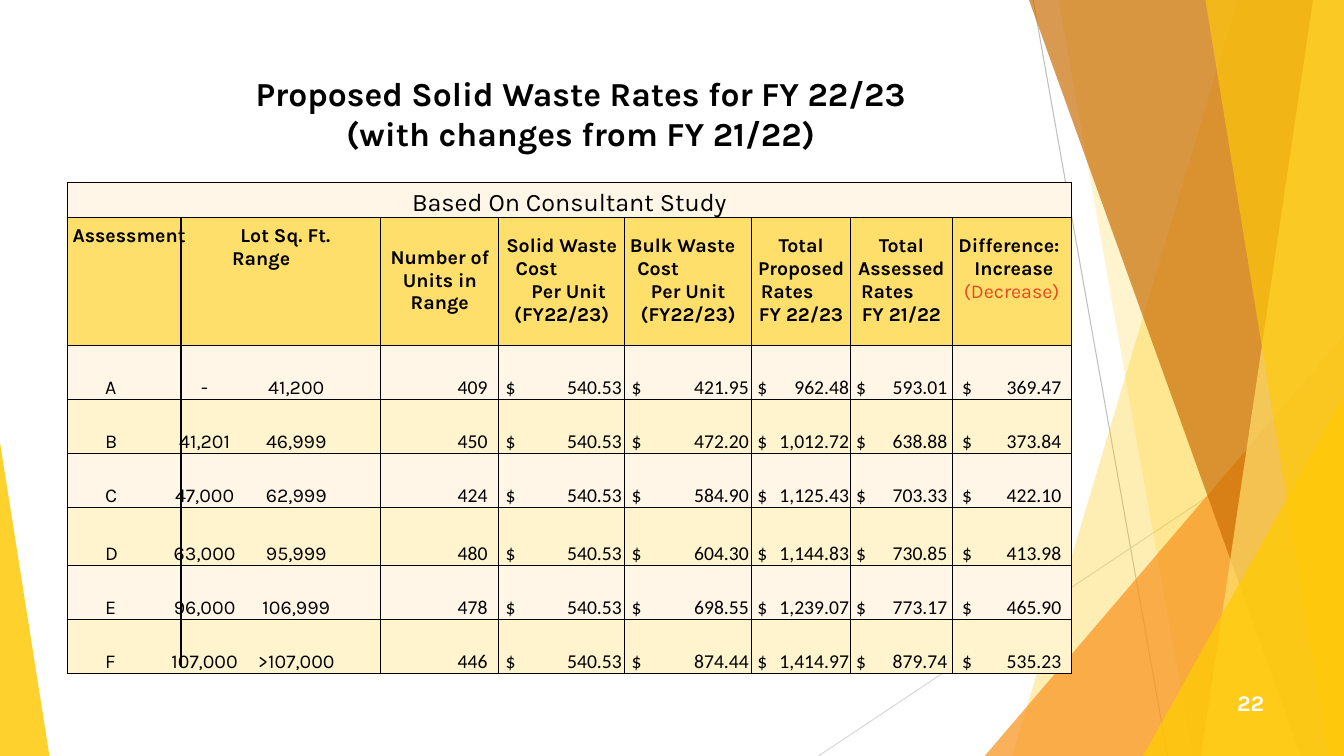
from dataclasses import dataclass

from lxml.etree import SubElement
from pptx import Presentation
from pptx.dml.color import RGBColor
from pptx.enum.shapes import MSO_CONNECTOR as Connector, MSO_SHAPE as Preset
from pptx.enum.text import MSO_ANCHOR as Anchor, PP_ALIGN as Align
from pptx.oxml.ns import qn
from pptx.util import Pt


@dataclass(frozen=True)
class Theme:
    gold: str = "FFCA08"
    pale_gold: str = "FFDF6B"
    orange: str = "F8931D"
    brown: str = "CA6F06"
    cream: str = "FFF6E7"
    lemon: str = "FFF4CE"
    red: str = "E64823"
    black: str = "000000"
    white: str = "FFFFFF"
    grey: str = "BFBFBF"
    light_grey: str = "D9D9D9"
    font: str = "Karla"
    number_font: str = "Calibri"
    title: int = 24
    subtitle: int = 18
    page_number: int = 16
    body: int = 14


@dataclass(frozen=True)
class Band:
    """Four-sided facet that reaches the right edge of the slide."""
    top_x: float
    bottom_x: float
    color: str
    opacity: int


@dataclass(frozen=True)
class Triangle:
    left: float
    top: float
    width: float
    apex: float
    color: str
    opacity: int


@dataclass(frozen=True)
class Line:
    """Header line; the indents move it sideways."""
    text: str
    left: float = 0
    right: float = 0
    tabs: tuple = ()
    color: str = "000000"
    bold: bool = True


@dataclass(frozen=True)
class Column:
    width: float
    head_top: float
    head: tuple
    pad_left: float = 0
    pad_right: float = 0


THEME = Theme()
WIDTH, HEIGHT = 960, 540

FACETS = (
    Band(884, 723, THEME.gold, 30),
    Band(756, 852, THEME.gold, 20),
    Triangle(703.4, 239.8, 256.6, 1, THEME.orange, 72),
    Band(735, 929.5, THEME.brown, 70),
    Band(938, 858, THEME.pale_gold, 70),
    Band(861, 949, THEME.gold, 65),
    Triangle(816.5, 283, 143.5, 1, THEME.gold, 80),
    Triangle(0, 316, 35.3, 0, THEME.gold, 85),
)

COLUMNS = (
    Column(223.9, 5, (Line("Assessment\tLot Sq. Ft.", tabs=((120, "l"),)),
                      Line("Range", left=114))),
    Column(84.2, 20.3, (Line("Number of"), Line("Units in"), Line("Range")), 0, 8),
    Column(90, 12, (Line("Solid Waste"), Line("Cost", right=36),
                    Line("Per Unit", left=10), Line("(FY22/23)")), 5, 2),
    Column(90.7, 12, (Line("Bulk Waste", right=8), Line("Cost", right=43),
                      Line("Per Unit"), Line("(FY22/23)")), 5, 2),
    Column(70.6, 12, (Line("Total"), Line("Proposed"), Line("Rates", right=20),
                      Line("FY 22/23")), 4, 1),
    Column(72.7, 12, (Line("Total"), Line("Assessed"), Line("Rates", right=20),
                      Line("FY 21/22")), 4, 3.5),
    Column(85, 12, (Line("Difference:", right=4), Line("Increase", left=3),
                    Line("(Decrease)", color=THEME.red, bold=False)), 7, 7),
)
RATES = (
    ("A", "-", "41,200", "409", "540.53", "421.95", "962.48", "593.01", "369.47"),
    ("B", "41,201", "46,999", "450", "540.53", "472.20", "1,012.72", "638.88", "373.84"),
    ("C", "47,000", "62,999", "424", "540.53", "584.90", "1,125.43", "703.33", "422.10"),
    ("D", "63,000", "95,999", "480", "540.53", "604.30", "1,144.83", "730.85", "413.98"),
    ("E", "96,000", "106,999", "478", "540.53", "698.55", "1,239.07", "773.17", "465.90"),
    ("F", "107,000", ">107,000", "446", "540.53", "874.44", "1,414.97", "879.74", "535.23"),
)
ROW_HEIGHTS = (25.4, 91.4, 38.6, 38.6, 38.6, 41.4, 38.6, 38.6)
RANGE_TABS = ((71, "ctr"), (136.5, "ctr"))


def add_span(para, text: str, size: int, color: str = THEME.black,
             bold: bool = False, font: str = THEME.font) -> None:
    span = para.add_run()
    span.text = text
    span.font.size, span.font.bold, span.font.name = Pt(size), bold, font
    span.font.color.rgb = RGBColor.from_string(color)


def indent(para, left: float = 0, right: float = 0, tabs: tuple = ()) -> None:
    props = para._p.get_or_add_pPr()
    props.set("marL", str(Pt(left)))
    props.set("marR", str(Pt(right)))
    if tabs:
        stops = SubElement(props, qn("a:tabLst"))
        for position, align in tabs:
            SubElement(stops, qn("a:tab"), pos=str(Pt(position)), algn=align)


def add_line(page, start: tuple, end: tuple, color: str, weight: float) -> None:
    line = page.shapes.add_connector(Connector.STRAIGHT, *map(Pt, start + end))
    line.line.color.rgb = RGBColor.from_string(color)
    line.line.width = Pt(weight)
    SubElement(line._element.spPr, qn("a:effectLst"))


def add_facet(page, facet: Band | Triangle) -> None:
    if isinstance(facet, Band):
        outline = page.shapes.build_freeform(Pt(facet.top_x), 0)
        outline.add_line_segments([(Pt(WIDTH), 0), (Pt(WIDTH), Pt(HEIGHT)),
                                   (Pt(facet.bottom_x), Pt(HEIGHT))], close=True)
        shape = outline.convert_to_shape()
    else:
        shape = page.shapes.add_shape(Preset.ISOSCELES_TRIANGLE, Pt(facet.left), Pt(facet.top),
                                      Pt(facet.width), Pt(HEIGHT - facet.top))
        shape.adjustments[0] = facet.apex
    shape.shadow.inherit = False
    shape.fill.solid()
    shape.fill.fore_color.rgb = RGBColor.from_string(facet.color)
    tint = shape._element.spPr.find(qn("a:solidFill")).find(qn("a:srgbClr"))
    SubElement(tint, qn("a:alpha"), val=str(facet.opacity * 1000))
    shape.line.fill.background()


def add_text(page, area: tuple, text: str, size: int, color: str, align: Align,
             anchor: Anchor) -> None:
    box = page.shapes.add_textbox(*map(Pt, area))
    box.text_frame.word_wrap = True
    box.text_frame.vertical_anchor = anchor
    para = box.text_frame.paragraphs[0]
    para.alignment = align
    add_span(para, text, size, color, bold=True)


def style_cell(cell, color: str, anchor: Anchor, side: float = 0, top: float = 0) -> None:
    cell.margin_left = cell.margin_right = Pt(side)
    cell.margin_top, cell.margin_bottom = Pt(top), 0
    cell.vertical_anchor = anchor
    props = cell._tc.get_or_add_tcPr()
    for edge in ("a:lnL", "a:lnR", "a:lnT", "a:lnB"):
        border = SubElement(props, qn(edge), w=str(Pt(1)))
        SubElement(SubElement(border, qn("a:solidFill")), qn("a:srgbClr"), val=THEME.black)
    cell.fill.solid()
    cell.fill.fore_color.rgb = RGBColor.from_string(color)


def add_rates_table(page) -> None:
    table = page.shapes.add_table(len(ROW_HEIGHTS), len(COLUMNS), Pt(48.2), Pt(130.2),
                                  Pt(717.1), Pt(sum(ROW_HEIGHTS))).table
    table.first_row = table.horz_banding = False
    for row, height in zip(table.rows, ROW_HEIGHTS):
        row.height = Pt(height)

    # Heading across all columns
    for cell in table.rows[0].cells:
        style_cell(cell, THEME.cream, Anchor.BOTTOM)
    table.cell(0, 0).merge(table.cell(0, len(COLUMNS) - 1))
    para = table.cell(0, 0).text_frame.paragraphs[0]
    para.alignment = Align.CENTER
    add_span(para, "Based On Consultant Study", THEME.subtitle)

    # Column headers
    for index, column in enumerate(COLUMNS):
        table.columns[index].width = Pt(column.width)
        cell = table.cell(1, index)
        style_cell(cell, THEME.pale_gold, Anchor.TOP, 3.6, column.head_top)
        for number, line in enumerate(column.head):
            frame = cell.text_frame
            para = frame.add_paragraph() if number else frame.paragraphs[0]
            para.alignment = Align.CENTER if index else Align.LEFT
            indent(para, line.left, line.right, line.tabs)
            add_span(para, line.text, THEME.body, line.color, line.bold)

    # Rates: lot range, units, then dollar amounts
    for number, (letter, low, high, units, *amounts) in enumerate(RATES):
        texts = [f"{letter}\t{low}\t{high}", units, *(f"$\t{amount}" for amount in amounts)]
        for index, (column, text) in enumerate(zip(COLUMNS, texts)):
            cell = table.cell(number + 2, index)
            style_cell(cell, THEME.lemon if number % 2 else THEME.cream, Anchor.BOTTOM)
            para = cell.text_frame.paragraphs[0]
            para.alignment = Align.RIGHT if index == 1 else Align.LEFT
            if index == 0:
                cell.margin_left = Pt(27)
                indent(para, tabs=RANGE_TABS)
            elif index == 1:
                cell.margin_right = Pt(column.pad_right)
            else:
                cell.margin_left = Pt(column.pad_left)
                stop = column.width - column.pad_left - column.pad_right
                indent(para, tabs=((stop, "r"),))
            add_span(para, text, THEME.body, font=THEME.number_font if index else THEME.font)


def main() -> None:
    deck = Presentation()
    deck.slide_width, deck.slide_height = Pt(WIDTH), Pt(HEIGHT)
    page = deck.slides.add_slide(deck.slide_layouts[6])

    # Background facets
    add_line(page, (738, 0), (834, HEIGHT), THEME.grey, 0.75)
    add_line(page, (WIDTH, 290), (584.6, HEIGHT), THEME.light_grey, 0.75)
    for facet in FACETS:
        add_facet(page, facet)

    # Title, table and page number
    add_text(page, (170.6, 48.2, 488.2, 65.5),
             "Proposed Solid Waste Rates for FY 22/23 (with changes from FY 21/22)",
             THEME.title, THEME.black, Align.CENTER, Anchor.TOP)
    add_rates_table(page)
    add_line(page, (129.6, 154.8), (129.6, 475.9), THEME.black, 1.5)
    add_text(page, (856, 487.5, 54, 28.8), "22", THEME.page_number, THEME.white,
             Align.RIGHT, Anchor.MIDDLE)
    deck.save("out.pptx")


if __name__ == "__main__":
    main()
